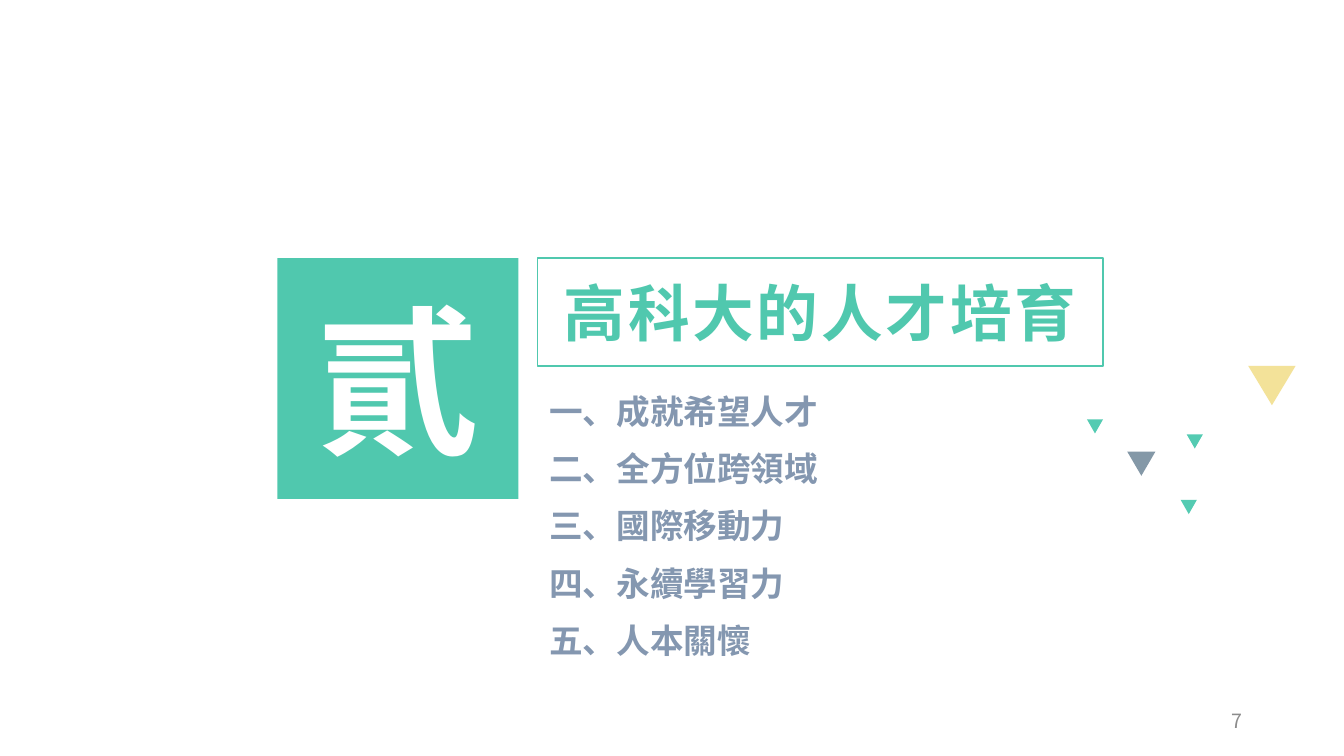
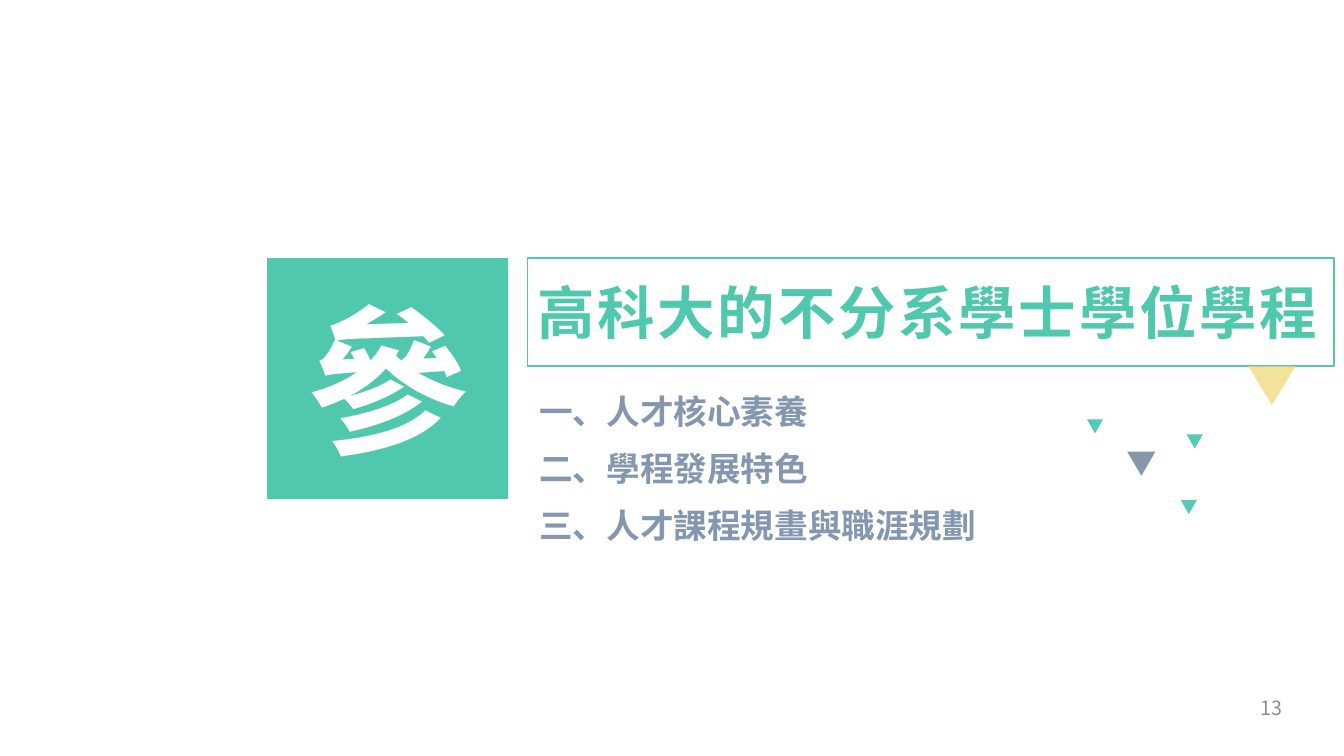
from pptx import Presentation
from pptx.dml.color import RGBColor
from pptx.enum.shapes import MSO_SHAPE as Shape
from pptx.enum.text import MSO_ANCHOR as Anchor, MSO_AUTO_SIZE as AutoSize, PP_ALIGN as Align
from pptx.oxml.ns import qn
from pptx.util import Inches, Pt
from lxml import etree

COLORS = {
    "teal": "50C8AE",
    "white": "FFFFFF",
    "list": "8497B0",
    "number": "8C8C8C",
    "yellow": "EED66F",
    "green": "0CB692",
    "slate": "516D82",
}
SANS = "Noto Sans CJK SC"
CONDENSED = "Roboto Condensed"

SQUARE = 2.39
BAND_TOP = 2.56
GAP = 0.19

TRIANGLES = [
    (12.38, 3.63, 0.47, 0.39, "yellow"),
    (10.78, 4.16, 0.16, 0.14, "green"),
    (11.71, 4.96, 0.16, 0.14, "green"),
    (11.77, 4.31, 0.16, 0.14, "green"),
    (11.18, 4.48, 0.28, 0.24, "slate"),
]

SECTIONS = [
    {
        "number": "7", "number_at": (9.42, 6.95),
        "numeral": "貳", "left": 2.75,
        "title": "高科大的人才培育", "title_width": 5.61, "title_size": 44,
        "title_align": Align.CENTER,
        "list_width": 5.24, "list_height": 2.79,
        "topics": ["一、成就希望人才", "二、全方位跨領域", "三、國際移動力",
                   "四、永續學習力", "五、人本關懷"],
    },
    {
        "number": "13", "number_at": (9.82, 6.82),
        "numeral": "參", "left": 2.65,
        "title": "高科大的不分系學士學位學程", "title_width": 8, "title_size": 41,
        "title_align": Align.JUSTIFY,
        "list_width": 6.12, "list_height": 1.65,
        "topics": ["一、人才核心素養", "二、學程發展特色", "三、人才課程規畫與職涯規劃"],
    },
]


def add_span(para, text, size, color, font=SANS, bold=True, spacing=0):
    span = para.add_run()
    span.text = text
    span.font.size = Pt(size)
    span.font.bold = bold
    span.font.name = font
    span.font.color.rgb = RGBColor.from_string(COLORS[color])
    properties = span.font._element
    etree.SubElement(properties, qn("a:ea")).set("typeface", font)
    if spacing:
        properties.set("spc", str(spacing * 100))


def add_panel(page, left, width, height, align):
    panel = page.shapes.add_shape(Shape.ROUNDED_RECTANGLE, Inches(left), Inches(BAND_TOP),
                                  Inches(width), Inches(height))
    panel.adjustments[0] = 0
    panel.shadow.inherit = False
    panel.text_frame.word_wrap = True
    panel.text_frame.vertical_anchor = Anchor.MIDDLE
    panel.text_frame.paragraphs[0].alignment = align
    return panel


deck = Presentation()
deck.slide_width = Inches(13.33)
deck.slide_height = Inches(7.5)

for section in SECTIONS:
    page = deck.slides.add_slide(deck.slide_layouts[6])

    left, top = section["number_at"]
    number = page.shapes.add_textbox(Inches(left), Inches(top), Inches(3), Inches(0.4))
    number.text_frame.word_wrap = True
    number.text_frame.vertical_anchor = Anchor.MIDDLE
    para = number.text_frame.paragraphs[0]
    para.alignment = Align.RIGHT
    add_span(para, section["number"], 14, "number", bold=False)

    numeral = add_panel(page, section["left"], SQUARE, SQUARE, Align.CENTER)
    numeral.fill.solid()
    numeral.fill.fore_color.rgb = RGBColor.from_string(COLORS["teal"])
    numeral.line.fill.background()
    frame = numeral.text_frame
    frame.margin_left = frame.margin_right = frame.margin_top = frame.margin_bottom = 0
    add_span(frame.paragraphs[0], section["numeral"], 115, "white", font=CONDENSED)

    title_left = section["left"] + SQUARE + GAP
    title = add_panel(page, title_left, section["title_width"], 1.07, section["title_align"])
    title.fill.background()
    title.line.color.rgb = RGBColor.from_string(COLORS["teal"])
    title.line.width = Pt(1)
    add_span(title.text_frame.paragraphs[0], section["title"], section["title_size"], "teal",
             spacing=2)

    cluster = page.shapes.add_group_shape()
    for left, top, width, height, color in TRIANGLES:
        triangle = cluster.shapes.add_shape(Shape.ISOSCELES_TRIANGLE, Inches(left), Inches(top),
                                            Inches(width), Inches(height))
        triangle.rotation = 180
        triangle.shadow.inherit = False
        triangle.line.fill.background()
        triangle.fill.solid()
        triangle.fill.fore_color.rgb = RGBColor.from_string(COLORS[color])
        tint = triangle._element.spPr.find(qn("a:solidFill")).find(qn("a:srgbClr"))
        etree.SubElement(tint, qn("a:alpha")).set("val", "70000")

    topics = page.shapes.add_textbox(Inches(title_left + 0.02), Inches(3.83),
                                     Inches(section["list_width"]),
                                     Inches(section["list_height"]))
    frame = topics.text_frame
    frame.word_wrap = True
    frame.auto_size = AutoSize.SHAPE_TO_FIT_TEXT
    for index, topic in enumerate(section["topics"]):
        para = frame.add_paragraph() if index else frame.paragraphs[0]
        para.space_before = Pt(6 if index else 0)
        para.space_after = Pt(6)
        add_span(para, topic, 24, "list")

deck.save("out.pptx")
